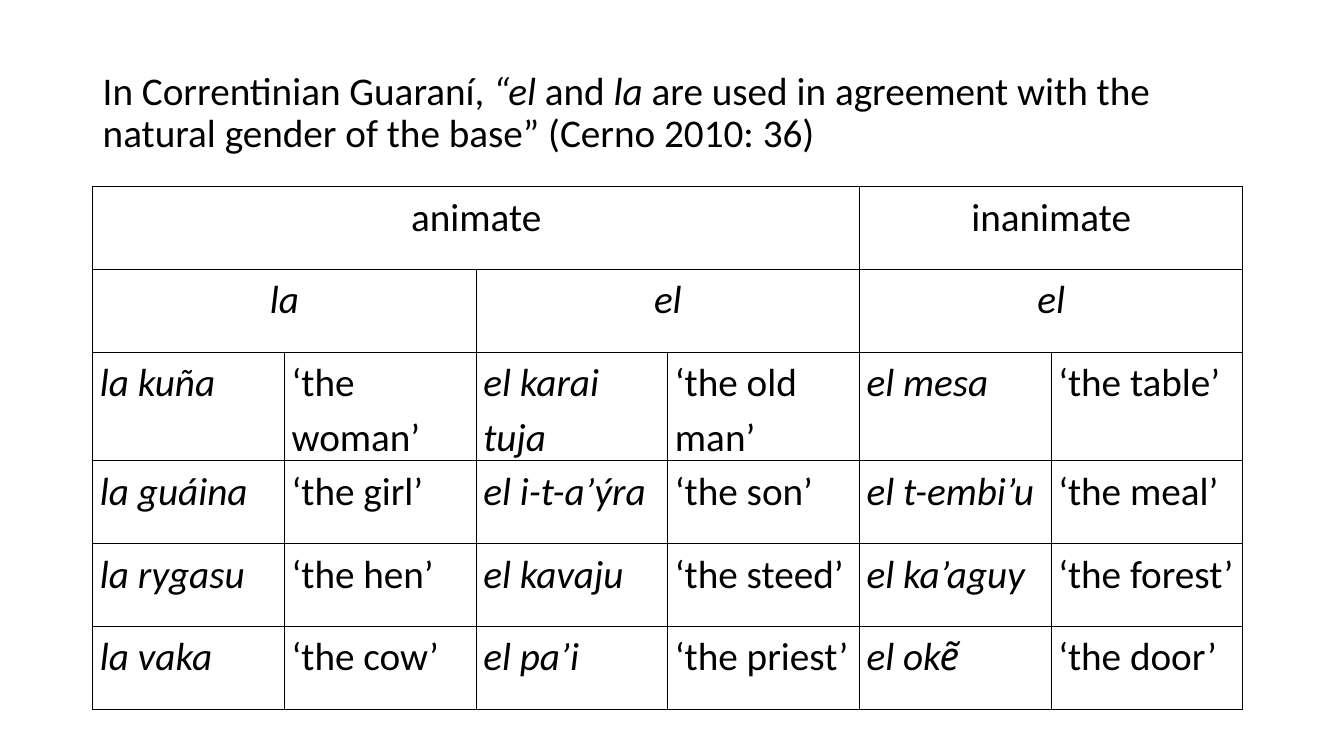
from dataclasses import dataclass

from lxml.etree import SubElement
from pptx import Presentation
from pptx.dml.color import RGBColor
from pptx.enum.text import MSO_ANCHOR, PP_ALIGN
from pptx.oxml.ns import qn
from pptx.util import Cm, Pt


@dataclass(frozen=True)
class Theme:
    font: str = "Calibri"
    size: int = 28
    ink: RGBColor = RGBColor(0, 0, 0)
    rule_width: int = 1
    title_spacing: float = 0.9
    cell_spacing: float = 1.15
    cell_margin: float = 0.18


INTRO = [
    ("In Correntinian Guaraní, ", False),
    ("“el", True),
    (" and ", False),
    ("la", True),
    (" are used in agreement with the natural gender of the base”"
     " (Cerno 2010: 36)", False),
]

# Each heading is (text, columns spanned, italic).
HEADINGS = [
    [("animate", 4, False), ("inanimate", 2, False)],
    [("la", 2, True), ("el", 2, True), ("el", 2, True)],
]

# Guaraní phrases alternate with their glosses.
EXAMPLES = [
    ["la kuña", "‘the woman’", "el karai tuja", "‘the old man’",
     "el mesa", "‘the table’"],
    ["la guáina", "‘the girl’", "el i-t-a’ýra", "‘the son’",
     "el t-embi’u", "‘the meal’"],
    ["la rygasu", "‘the hen’", "el kavaju", "‘the steed’",
     "el ka’aguy", "‘the forest’"],
    ["la vaka", "‘the cow’", "el pa’i", "‘the priest’",
     "el oke͂", "‘the door’"],
]


def write(frame, runs, theme, *, spacing, align=PP_ALIGN.LEFT):
    """Fill the frame's first paragraph with (text, italic) runs."""
    paragraph = frame.paragraphs[0]
    paragraph.alignment = align
    paragraph.line_spacing = spacing
    for text, italic in runs:
        run = paragraph.add_run()
        run.text = text
        run.font.name = theme.font
        run.font.size = Pt(theme.size)
        run.font.italic = italic
        run.font.color.rgb = theme.ink


class SlideBuilder:
    def __init__(self, slide, theme):
        self.slide = slide
        self.theme = theme

    def title(self, runs, left, top, width, height):
        box = self.slide.shapes.add_textbox(Cm(left), Cm(top), Cm(width), Cm(height))
        frame = box.text_frame
        frame.word_wrap = True
        frame.vertical_anchor = MSO_ANCHOR.MIDDLE
        write(frame, runs, self.theme, spacing=self.theme.title_spacing)

    def table(self, headings, examples, left, top, column_width, row_height):
        row_count = len(headings) + len(examples)
        column_count = len(examples[0])
        table = self.slide.shapes.add_table(
            row_count, column_count, Cm(left), Cm(top),
            Cm(column_width * column_count), Cm(row_height * row_count)).table
        table.first_row = table.horz_banding = False
        for column in table.columns:
            column.width = Cm(column_width)
        for row in table.rows:
            row.height = Cm(row_height)
        for cell in table.iter_cells():
            self.style_cell(cell)

        for row, spans in enumerate(headings):
            column = 0
            for text, span, italic in spans:
                cell = table.cell(row, column)
                cell.merge(table.cell(row, column + span - 1))
                self.cell_text(cell, text, italic, PP_ALIGN.CENTER)
                column += span
        for row, phrases in enumerate(examples, len(headings)):
            for column, phrase in enumerate(phrases):
                self.cell_text(table.cell(row, column), phrase, column % 2 == 0)

    def cell_text(self, cell, text, italic, align=PP_ALIGN.LEFT):
        write(cell.text_frame, [(text, italic)], self.theme,
              spacing=self.theme.cell_spacing, align=align)

    def style_cell(self, cell):
        """Clear the fill, set the margins and rule all four sides."""
        cell.fill.background()
        cell.margin_left = cell.margin_right = Cm(self.theme.cell_margin)
        cell.margin_top = cell.margin_bottom = 0
        properties = cell._tc.get_or_add_tcPr()
        for position, side in enumerate(("lnL", "lnR", "lnT", "lnB")):
            border = SubElement(properties, qn(f"a:{side}"),
                                w=str(Pt(self.theme.rule_width)))
            fill = SubElement(border, qn("a:solidFill"))
            SubElement(fill, qn("a:srgbClr"), val=str(self.theme.ink))
            properties.insert(position, border)


def main():
    presentation = Presentation()
    presentation.slide_width = Cm(33.87)
    presentation.slide_height = Cm(19.05)
    blank = presentation.slide_layouts[6]
    builder = SlideBuilder(presentation.slides.add_slide(blank), Theme())
    builder.title(INTRO, 2.34, 1.02, 29.21, 3.68)
    builder.table(HEADINGS, EXAMPLES, 2.34, 4.7, column_width=4.83, row_height=2.09)
    presentation.save("out.pptx")


if __name__ == "__main__":
    main()
